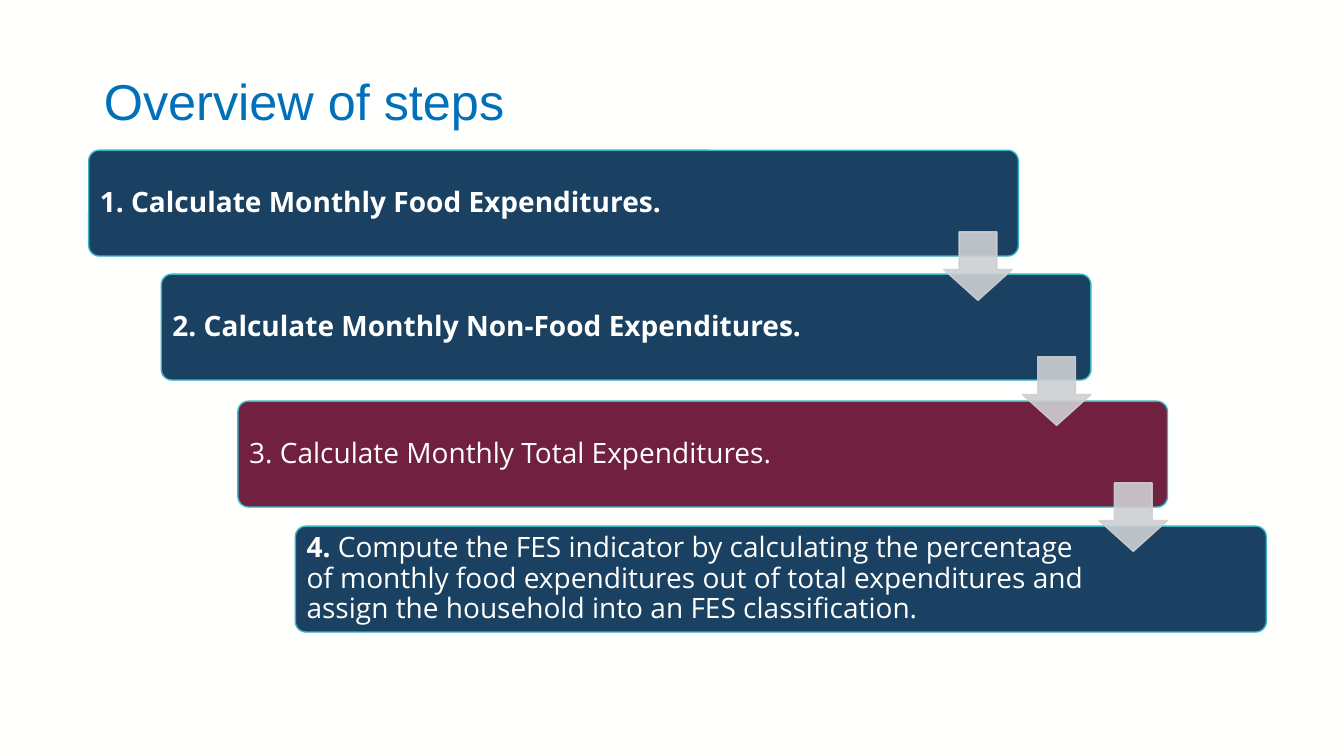
import pptx
import pptx.dml.color
import pptx.enum.shapes
import pptx.enum.text
import pptx.oxml.ns
import pptx.util
from lxml import etree

Inches, Pt = pptx.util.Inches, pptx.util.Pt
RGBColor = pptx.dml.color.RGBColor
MSO_SHAPE = pptx.enum.shapes.MSO_SHAPE
PP_ALIGN = pptx.enum.text.PP_ALIGN
MIDDLE = pptx.enum.text.MSO_ANCHOR.MIDDLE
qn = pptx.oxml.ns.qn

WHITE = RGBColor(0xFF, 0xFF, 0xFE)
BLUE = RGBColor(0x00, 0x70, 0xBA)
NAVY = RGBColor(0x1A, 0x41, 0x61)
WINE = RGBColor(0x72, 0x20, 0x40)
TEAL = RGBColor(0x36, 0xB5, 0xC5)
GREY = RGBColor(0xCD, 0xCF, 0xD2)

STEP_HEIGHT = 1.05
ARROW_SIZE = 0.68
STEPS = [
    (0.88, 1.49, 9.22, NAVY, [("1. Calculate Monthly Food Expenditures.", True)]),
    (1.6, 2.72, 9.22, NAVY, [("2. Calculate Monthly Non-Food Expenditures.", True)]),
    (2.36, 3.98, 9.22, WINE, [("3. Calculate Monthly Total Expenditures.", False)]),
    (2.93, 5.22, 9.63, NAVY, [
        ("4. ", True),
        ("Compute the FES indicator by calculating the percentage of monthly food "
         "expenditures out of total expenditures and assign the household into an "
         "FES classification.", False)]),
]
ARROWS = [(9.36, 2.3), (10.14, 3.54), (10.9, 4.79)]


def apply(obj, formats):
    """Set each named attribute of an object."""
    for name, value in formats.items():
        setattr(obj, name, value)


def add_run(p, text, color, **formats):
    """Add a formatted run to a paragraph."""
    r = p.add_run()
    r.text = text
    apply(r.font, formats)
    r.font.color.rgb = color


def add_box(s, kind, box, fill, line, adjustments):
    """Add a filled and outlined preset shape in the given box."""
    sp = s.shapes.add_shape(kind, *map(Inches, box))
    sp.shadow.inherit = False
    sp.fill.solid()
    sp.fill.fore_color.rgb = fill
    sp.line.color.rgb = line
    sp.line.width = Pt(1)
    for i, value in enumerate(adjustments):
        sp.adjustments[i] = value
    return sp


def add_title(s, box, text):
    """Place and fill the title placeholder."""
    sp = s.shapes.title
    apply(sp, dict(zip(("left", "top", "width", "height"), map(Inches, box))))
    tf = sp.text_frame
    apply(tf, {"word_wrap": True, "vertical_anchor": MIDDLE})
    p = tf.paragraphs[0]
    apply(p, {"alignment": PP_ALIGN.LEFT, "line_spacing": 0.9})
    add_run(p, text, BLUE, size=Pt(36), name="Arial")


def add_step(s, box, fill, runs):
    """Add one step of the staircase, keeping its right end free for the arrow."""
    sp = add_box(s, MSO_SHAPE.ROUNDED_RECTANGLE, box, fill, TEAL, [0.1])
    tf = sp.text_frame
    inset = Inches(0.08)
    apply(tf, {"word_wrap": True, "vertical_anchor": MIDDLE,
               "margin_left": inset, "margin_top": inset,
               "margin_bottom": inset, "margin_right": Inches(1.6)})
    p = tf.paragraphs[0]
    apply(p, {"alignment": PP_ALIGN.LEFT, "line_spacing": 0.9})
    for text, bold in runs:
        add_run(p, text, WHITE, size=Pt(20), name="Open Sans", bold=bold)


def add_arrow(s, box):
    """Add a slightly transparent arrow leading to the next step."""
    sp = add_box(s, MSO_SHAPE.DOWN_ARROW, box, GREY, GREY, [0.55, 0.45])
    for color in sp.fill._xPr.iter(qn("a:srgbClr")):
        etree.SubElement(color, qn("a:alpha"), val="90000")


def build_slide(prs):
    """Build the overview slide."""
    s = prs.slides.add_slide(prs.slide_layouts[5])
    s.background.fill.solid()
    s.background.fill.fore_color.rgb = WHITE
    add_title(s, (0.93, 0.4, 11.53, 1.26), "Overview of steps")
    for left, top, width, fill, runs in STEPS:
        add_step(s, (left, top, width, STEP_HEIGHT), fill, runs)
    for left, top in ARROWS:
        add_arrow(s, (left, top, ARROW_SIZE, ARROW_SIZE))


def main():
    """Create and save the presentation."""
    prs = pptx.Presentation()
    apply(prs, {"slide_width": Inches(13.33), "slide_height": Inches(7.5)})
    build_slide(prs)
    prs.save("out.pptx")


if __name__ == "__main__":
    main()
